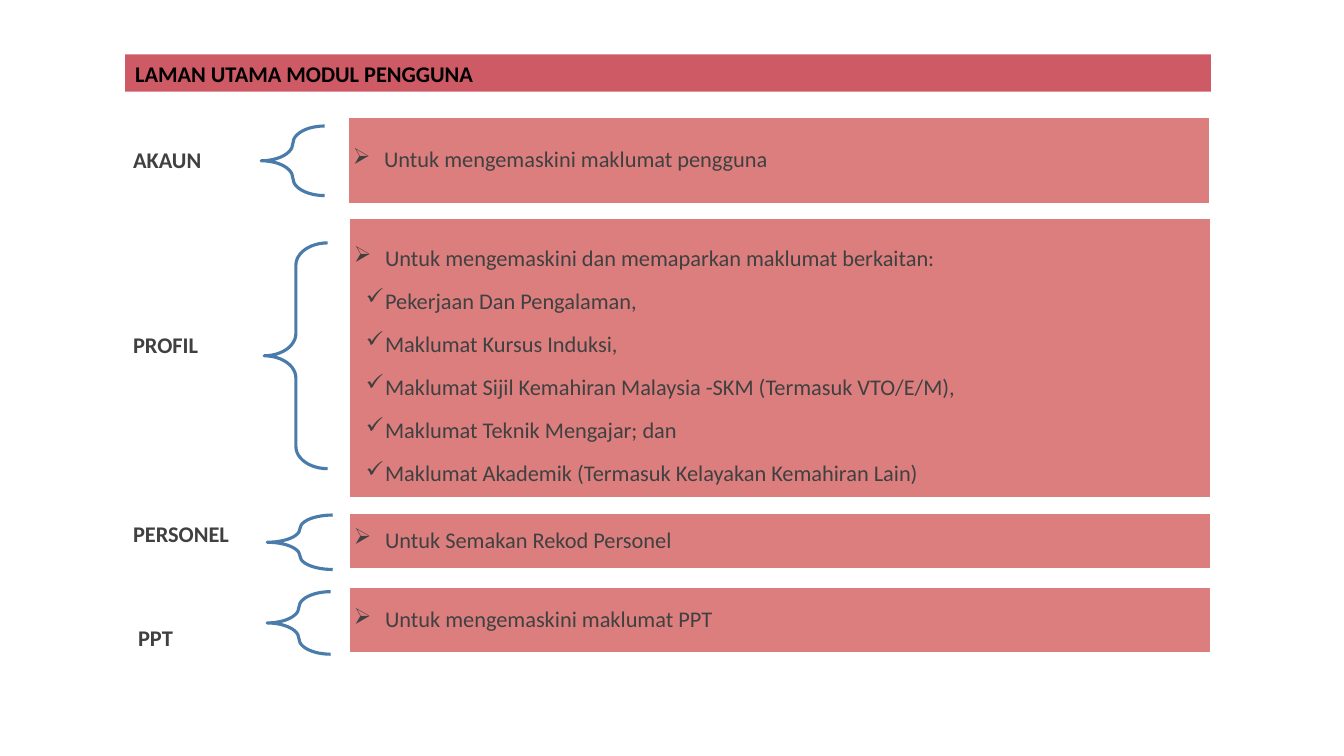
from lxml.etree import SubElement
from pptx import Presentation
from pptx.dml.color import RGBColor
from pptx.enum.shapes import MSO_SHAPE as Shape
from pptx.enum.text import MSO_ANCHOR as Anchor, PP_ALIGN as Align
from pptx.oxml.ns import qn
from pptx.util import Pt

PX = 9144
COLORS = {"title": "CE5A65", "panel": "DC7E7E", "brace": "497CAB",
          "text": "404040", "heading": "000000", "edge": "FFFFFF"}
MODULES = [
    ("AKAUN", (123, 117, 130, 85), (259, 125, 63, 69), (345, 116, 855, 86), 0.9,
     ["Untuk mengemaskini maklumat pengguna"]),
    ("PROFIL", (123, 293, 130, 101), (262, 241, 63, 224), (346, 217, 855, 277), 1.5,
     ["Untuk mengemaskini dan memaparkan maklumat berkaitan:",
      "Pekerjaan Dan Pengalaman,",
      "Maklumat Kursus Induksi,",
      "Maklumat Sijil Kemahiran Malaysia -SKM (Termasuk VTO/E/M),",
      "Maklumat Teknik Mengajar; dan",
      "Maklumat Akademik (Termasuk Kelayakan Kemahiran Lain)"]),
    ("PERSONEL", (123, 481, 162, 101), (265, 511, 65, 54), (346, 509, 855, 55), 0.9,
     ["Untuk Semakan Rekod Personel"]),
    ("PPT", (128, 603, 130, 62), (265, 587, 63, 62), (346, 583, 855, 65), 0.9,
     ["Untuk mengemaskini maklumat PPT"]),
]


class ModuleSlide:
    """Draws the elements of one slide in a shared style."""

    def __init__(self, presentation):
        self.slide = presentation.slides.add_slide(presentation.slide_layouts[5])

    def color(self, name):
        return RGBColor.from_string(COLORS[name])

    def box(self, at):
        return [value * PX for value in at]

    def fill(self, shape, name):
        shape.fill.solid()
        shape.fill.fore_color.rgb = self.color(name)

    def frame(self, shape, inset_x, inset_y):
        text_frame = shape.text_frame
        text_frame.word_wrap = True
        text_frame.vertical_anchor = Anchor.MIDDLE
        text_frame.margin_left = text_frame.margin_right = inset_x * PX
        text_frame.margin_top = text_frame.margin_bottom = inset_y * PX
        return text_frame

    def set_text(self, paragraph, text, color="text", bold=False, spacing=0.9, after=0):
        paragraph.text = text
        paragraph.alignment = Align.LEFT
        paragraph.line_spacing = spacing
        paragraph.space_after = Pt(after)
        for run in paragraph.runs:
            run.font.name = "Calibri"
            run.font.size = Pt(16)
            run.font.bold = bold
            run.font.color.rgb = self.color(color)

    def bullet(self, paragraph, symbol, hanging):
        properties = paragraph._p.get_or_add_pPr()
        properties.set("marL", str(31 * PX))
        properties.set("indent", str(-hanging * PX))
        SubElement(properties, qn("a:buChar")).set("char", symbol)

    def title(self, at, text):
        shape = self.slide.shapes.title
        shape.left, shape.top, shape.width, shape.height = self.box(at)
        self.fill(shape, "title")
        text_frame = self.frame(shape, 10, 5)
        self.set_text(text_frame.paragraphs[0], text, "heading", True, 1.0)

    def label(self, at, text):
        shape = self.slide.shapes.add_textbox(*self.box(at))
        text_frame = self.frame(shape, 9, 3)
        self.set_text(text_frame.paragraphs[0], text, bold=True)

    def brace(self, at):
        shape = self.slide.shapes.add_shape(Shape.LEFT_BRACE, *self.box(at))
        shape.shadow.inherit = False
        shape.adjustments[0] = 0.35
        shape.fill.background()
        shape.line.color.rgb = self.color("brace")
        shape.line.width = Pt(2.25)

    def panel(self, at, spacing, items):
        shape = self.slide.shapes.add_shape(Shape.RECTANGLE, *self.box(at))
        shape.shadow.inherit = False
        self.fill(shape, "panel")
        shape.line.color.rgb = self.color("edge")
        shape.line.width = Pt(1)
        text_frame = self.frame(shape, 5, 5)
        for index, item in enumerate(items):
            paragraph = text_frame.add_paragraph() if index else text_frame.paragraphs[0]
            paragraph.level = 2 if index else 1
            self.bullet(paragraph, *(("✓", 19) if index else ("➢", 31)))
            self.set_text(paragraph, item, spacing=spacing, after=2)


def main():
    presentation = Presentation()
    presentation.slide_width = 1333 * PX
    presentation.slide_height = 750 * PX
    page = ModuleSlide(presentation)
    page.title((124, 54, 1077, 37), "LAMAN UTAMA MODUL PENGGUNA")
    for name, label_at, brace_at, panel_at, spacing, items in MODULES:
        page.label(label_at, name)
        page.brace(brace_at)
        page.panel(panel_at, spacing, items)
    presentation.save("out.pptx")


if __name__ == "__main__":
    main()
